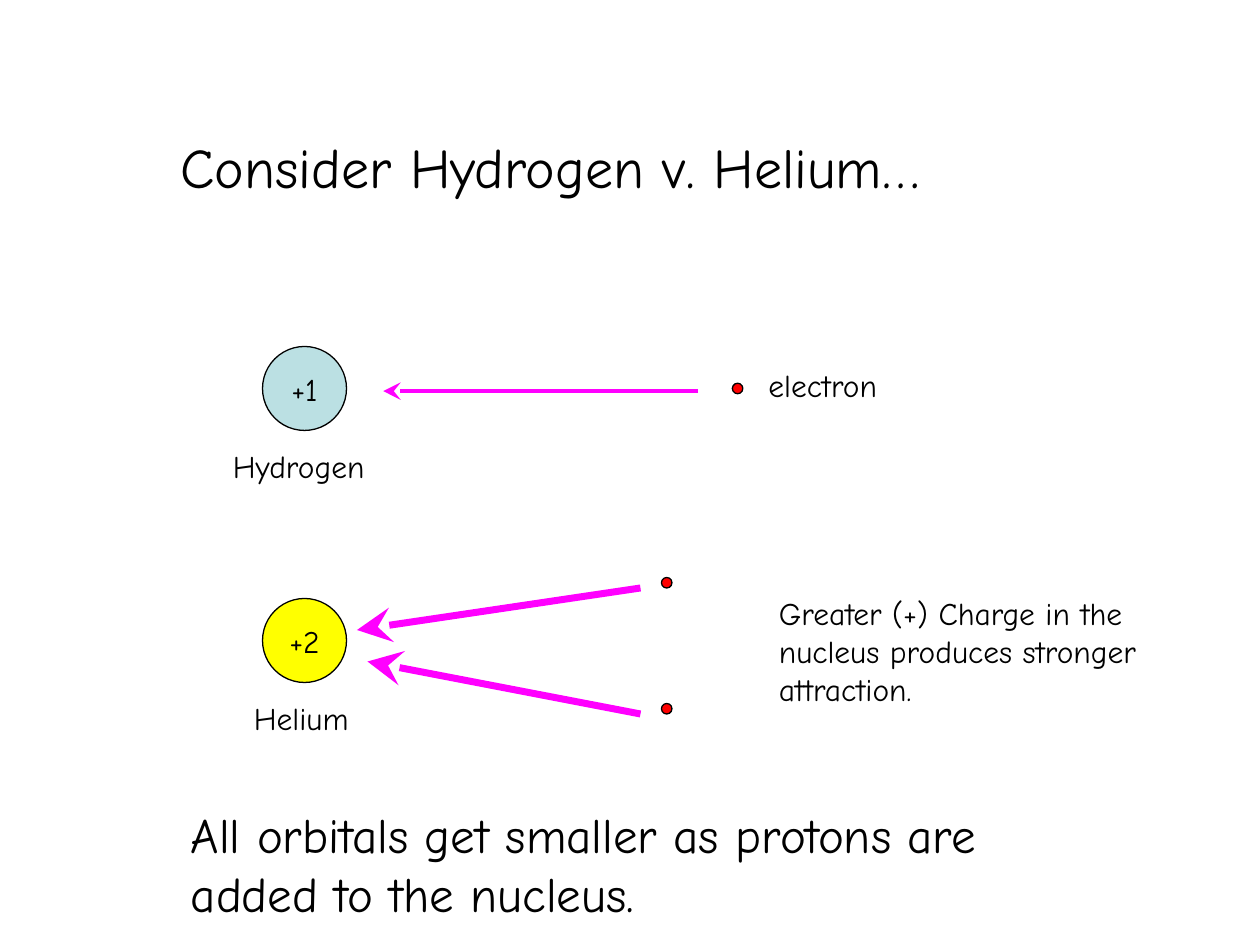
from dataclasses import dataclass

import lxml.etree
import pptx
import pptx.dml.color
import pptx.enum.shapes
import pptx.enum.text
import pptx.oxml.ns
import pptx.util

EMU_PER_PX = 9525
FONT = "Comic Neue"
BLACK = pptx.dml.color.RGBColor(0x00, 0x00, 0x00)
PALE_BLUE = pptx.dml.color.RGBColor(0xBB, 0xE0, 0xE3)
YELLOW = pptx.dml.color.RGBColor(0xFF, 0xFF, 0x00)
RED = pptx.dml.color.RGBColor(0xFF, 0x00, 0x00)
MAGENTA = pptx.dml.color.RGBColor(0xFF, 0x00, 0xFF)
NUCLEUS_SIZE = 64
ELECTRON_SIZE = 8


@dataclass
class Circle:
    left: int
    top: int
    size: int
    fill: pptx.dml.color.RGBColor
    charge: str = ""


@dataclass
class Arrow:
    start: tuple[int, int]
    tip: tuple[int, int]
    weight: int


@dataclass
class Caption:
    text: str
    left: int
    top: int
    width: int
    height: int
    size: int = 18


CIRCLES = [
    Circle(200, 264, NUCLEUS_SIZE, PALE_BLUE, "+1"),
    Circle(200, 456, NUCLEUS_SIZE, YELLOW, "+2"),
    Circle(558, 292, ELECTRON_SIZE, RED),
    Circle(504, 440, ELECTRON_SIZE, RED),
    Circle(504, 536, ELECTRON_SIZE, RED),
]
ARROWS = [
    Arrow((532, 298), (292, 298), 2),
    Arrow((488, 448), (272, 480), 4),
    Arrow((488, 544), (280, 504), 4),
]
CAPTIONS = [
    Caption("Consider Hydrogen v. Helium…", 128, 96, 696, 60, 32),
    Caption("Hydrogen", 168, 336, 224, 38),
    Caption("Helium", 184, 528, 120, 38),
    Caption("electron", 576, 274, 136, 38),
    Caption("Greater (+) Charge in the nucleus produces stronger attraction.",
            584, 448, 296, 96),
    Caption("All orbitals get smaller as protons are added to the nucleus.",
            136, 608, 664, 99, 28),
]


def px(length: int) -> pptx.util.Emu:
    return pptx.util.Emu(length * EMU_PER_PX)


def add_run(para, text: str, size: int) -> None:
    run = para.add_run()
    run.text = text
    run.font.name = FONT
    run.font.size = pptx.util.Pt(size)
    run.font.color.rgb = BLACK


def draw_circle(page, circle: Circle) -> None:
    shape = page.shapes.add_shape(
        pptx.enum.shapes.MSO_SHAPE.OVAL,
        px(circle.left), px(circle.top), px(circle.size), px(circle.size))
    shape.shadow.inherit = False
    shape.fill.solid()
    shape.fill.fore_color.rgb = circle.fill
    shape.line.color.rgb = BLACK
    shape.line.width = pptx.util.Pt(0.75)
    if circle.charge:
        frame = shape.text_frame
        frame.word_wrap = False
        frame.vertical_anchor = pptx.enum.text.MSO_ANCHOR.MIDDLE
        para = frame.paragraphs[0]
        para.alignment = pptx.enum.text.PP_ALIGN.CENTER
        add_run(para, circle.charge, 18)


def draw_arrow(page, arrow: Arrow) -> None:
    connector = page.shapes.add_connector(
        pptx.enum.shapes.MSO_CONNECTOR.STRAIGHT,
        *map(px, arrow.start + arrow.tip))
    connector.line.color.rgb = MAGENTA
    connector.line.width = pptx.util.Pt(arrow.weight)
    qn = pptx.oxml.ns.qn
    properties = connector._element.spPr
    lxml.etree.SubElement(properties.find(qn("a:ln")), qn("a:tailEnd"),
                          type="stealth", w="lg", len="lg")
    lxml.etree.SubElement(properties, qn("a:effectLst"))


def draw_caption(page, caption: Caption) -> None:
    box = page.shapes.add_textbox(px(caption.left), px(caption.top),
                                  px(caption.width), px(caption.height))
    box.text_frame.word_wrap = True
    box.text_frame.auto_size = pptx.enum.text.MSO_AUTO_SIZE.SHAPE_TO_FIT_TEXT
    add_run(box.text_frame.paragraphs[0], caption.text, caption.size)


def main() -> None:
    deck = pptx.Presentation()
    deck.slide_width = px(960)
    deck.slide_height = px(720)
    page = deck.slides.add_slide(deck.slide_layouts[6])
    for circle in CIRCLES:
        draw_circle(page, circle)
    for arrow in ARROWS:
        draw_arrow(page, arrow)
    for caption in CAPTIONS:
        draw_caption(page, caption)
    deck.save("out.pptx")


if __name__ == "__main__":
    main()
